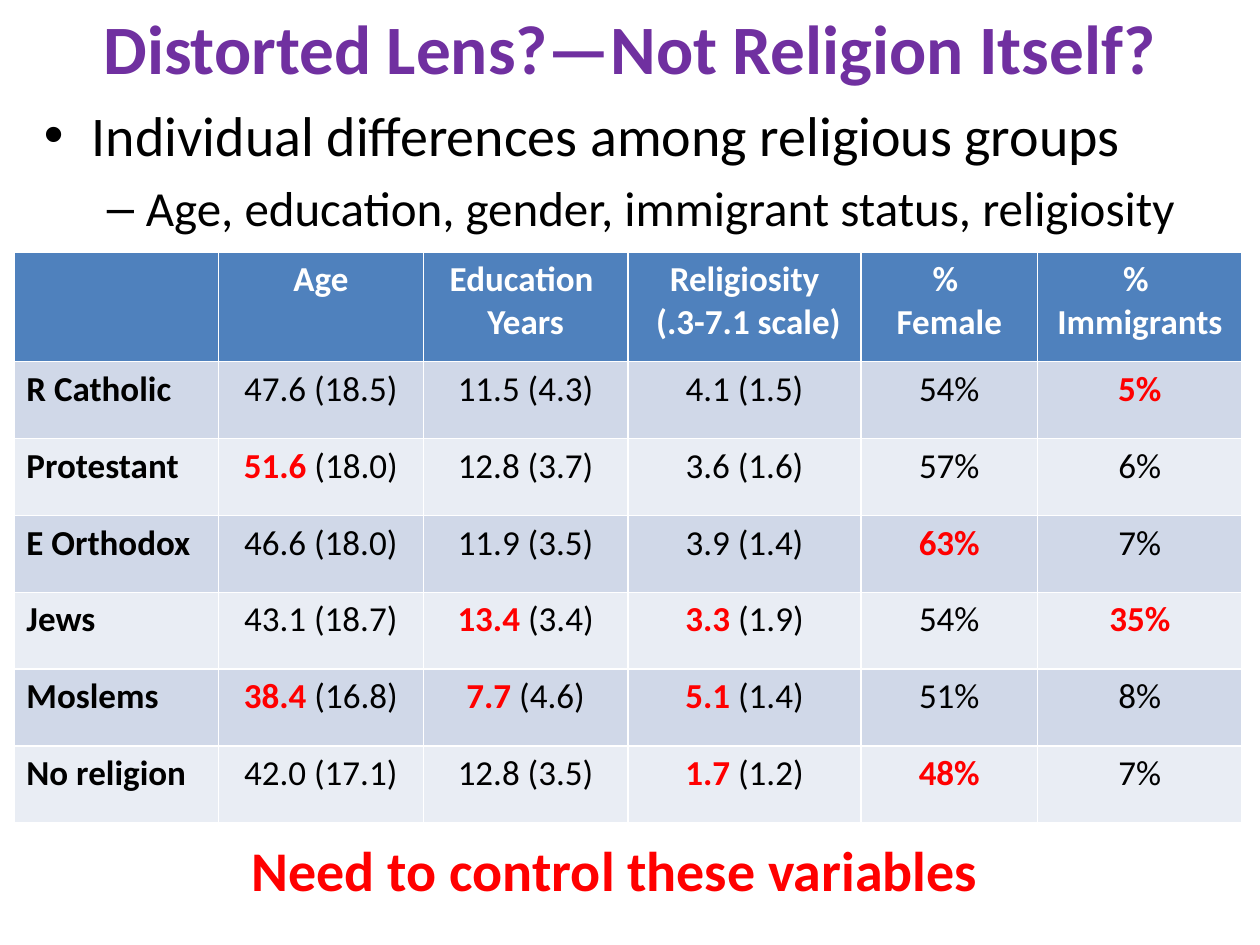
"""Build a slide that compares individual differences among religious groups."""
from lxml import etree
from pptx import Presentation
from pptx import util as u
from pptx.dml.color import RGBColor
from pptx.enum import text
from pptx.oxml import ns

PURPLE = RGBColor(0x70, 0x30, 0xA0)
RED = RGBColor(0xFF, 0x00, 0x00)
BLACK = RGBColor(0x00, 0x00, 0x00)
WHITE = RGBColor(0xFF, 0xFF, 0xFF)
HEADER_BLUE = RGBColor(0x4F, 0x81, 0xBD)
BANDS = [RGBColor(0xD0, 0xD8, 0xE8), RGBColor(0xE9, 0xED, 0xF4)]
CENTER = text.PP_ALIGN.CENTER


def add_words(paragraph, words, size, color, bold=False):
    run = paragraph.add_run()
    run.text = words
    for name, value in {"name": "Calibri", "size": u.Pt(size), "bold": bold}.items():
        setattr(run.font, name, value)
    run.font.color.rgb = color


def share(left, top, width, height):
    return [int(W * left), int(H * top), int(W * width), int(H * height)]


deck = Presentation()
W, H = deck.slide_width, deck.slide_height = u.Inches(10), u.Inches(7.5)
slide = deck.slides.add_slide(deck.slide_layouts[5])

title = slide.shapes.title
title.left, title.top, title.width, title.height = share(0.05, -0.0227, 0.9, 0.144)
title.text_frame.vertical_anchor = text.MSO_ANCHOR.MIDDLE
title.text_frame.paragraphs[0].alignment = CENTER
add_words(title.text_frame.paragraphs[0], "Distorted Lens?—Not Religion Itself?", 39.6, PURPLE, True)

differences = slide.shapes.add_textbox(*share(0.025, 0.1, 0.942, 0.16)).text_frame
differences.word_wrap = True
outline = [
    ("Individual differences among religious groups", 32, "•", 0.38, 0.38),
    ("Age, education, gender, immigrant status, religiosity", 28, "–", 0.81, 0.31),
]
for level, (words, size, bullet, margin, hang) in enumerate(outline):
    point = differences.add_paragraph() if level else differences.paragraphs[0]
    point.level = level
    point.space_before = u.Pt(size * 0.2)
    add_words(point, words, size, BLACK)
    layout = point._p.get_or_add_pPr()
    layout.set("marL", str(u.Inches(margin)))
    layout.set("indent", str(-u.Inches(hang)))
    etree.SubElement(layout, ns.qn("a:buFont")).set("typeface", "Arial")
    etree.SubElement(layout, ns.qn("a:buChar")).set("char", bullet)

headings = ["", "Age", "Education \nYears", "Religiosity\n (.3-7.1 scale)", "% \nFemale", "% \nImmigrants"]
groups = [
    ["R Catholic", "47.6 (18.5)", "11.5 (4.3)", "4.1 (1.5)", "54%", "*5%"],
    ["Protestant", "*51.6 (18.0)", "12.8 (3.7)", "3.6 (1.6)", "57%", "6%"],
    ["E Orthodox", "46.6 (18.0)", "11.9 (3.5)", "3.9 (1.4)", "*63%", "7%"],
    ["Jews", "43.1 (18.7)", "*13.4 (3.4)", "*3.3 (1.9)", "54%", "*35%"],
    ["Moslems", "*38.4 (16.8)", "*7.7 (4.6)", "*5.1 (1.4)", "51%", "8%"],
    ["No religion", "42.0 (17.1)", "12.8 (3.5)", "*1.7 (1.2)", "*48%", "7%"],
]
column_shares = [0.1625, 0.1625, 0.1625, 0.185, 0.14, 0.1625]
row_shares = [0.116] + [0.0814] * len(groups)
comparison = slide.shapes.add_table(
    len(row_shares), len(column_shares), *share(0.011, 0.2667, sum(column_shares), sum(row_shares))
).table
for column, part in zip(comparison.columns, column_shares):
    column.width = int(W * part)
for row, part in zip(comparison.rows, row_shares):
    row.height = int(H * part)

for r, entries in enumerate([headings] + groups):
    for c, entry in enumerate(entries):
        cell = comparison.cell(r, c)
        cell.fill.solid()
        cell.fill.fore_color.rgb = BANDS[(r - 1) % 2] if r else HEADER_BLUE
        for n, line in enumerate(entry.split("\n")):
            paragraph = cell.text_frame.add_paragraph() if n else cell.text_frame.paragraphs[0]
            if r == 0 or c > 0:
                paragraph.alignment = CENTER
            if line.startswith("*"):
                extreme, gap, deviation = line[1:].partition(" ")
                add_words(paragraph, extreme, 20, RED, True)
                line = gap + deviation
            if line:
                add_words(paragraph, line, 20, BLACK if r else WHITE, r == 0 or c == 0)

conclusion = slide.shapes.add_textbox(*share(0.142, 0.8773, 0.692, 0.0853)).text_frame
conclusion.word_wrap = True
conclusion.paragraphs[0].alignment = CENTER
add_words(conclusion.paragraphs[0], "Need to control these variables", 32, RED, True)

deck.save("out.pptx")
